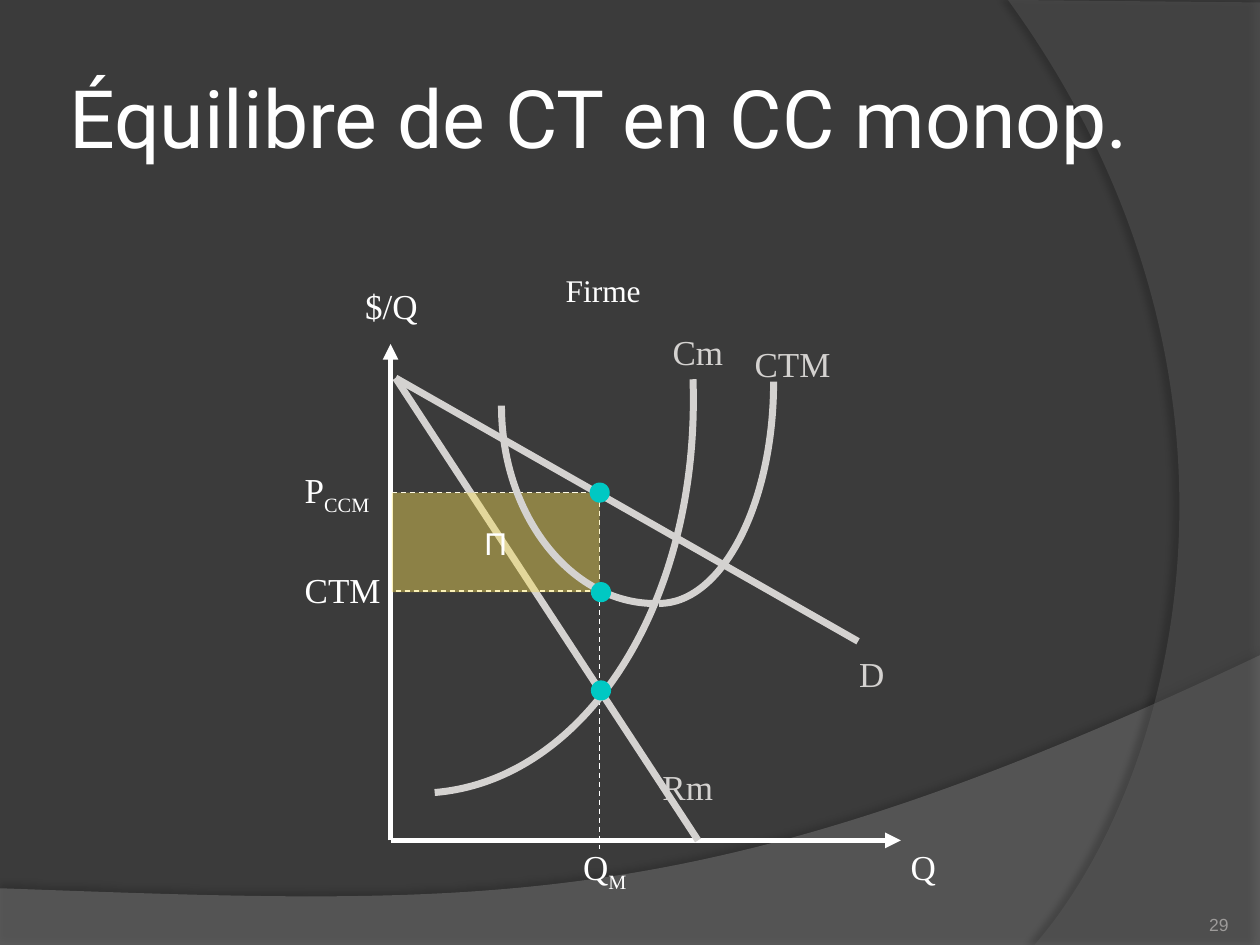
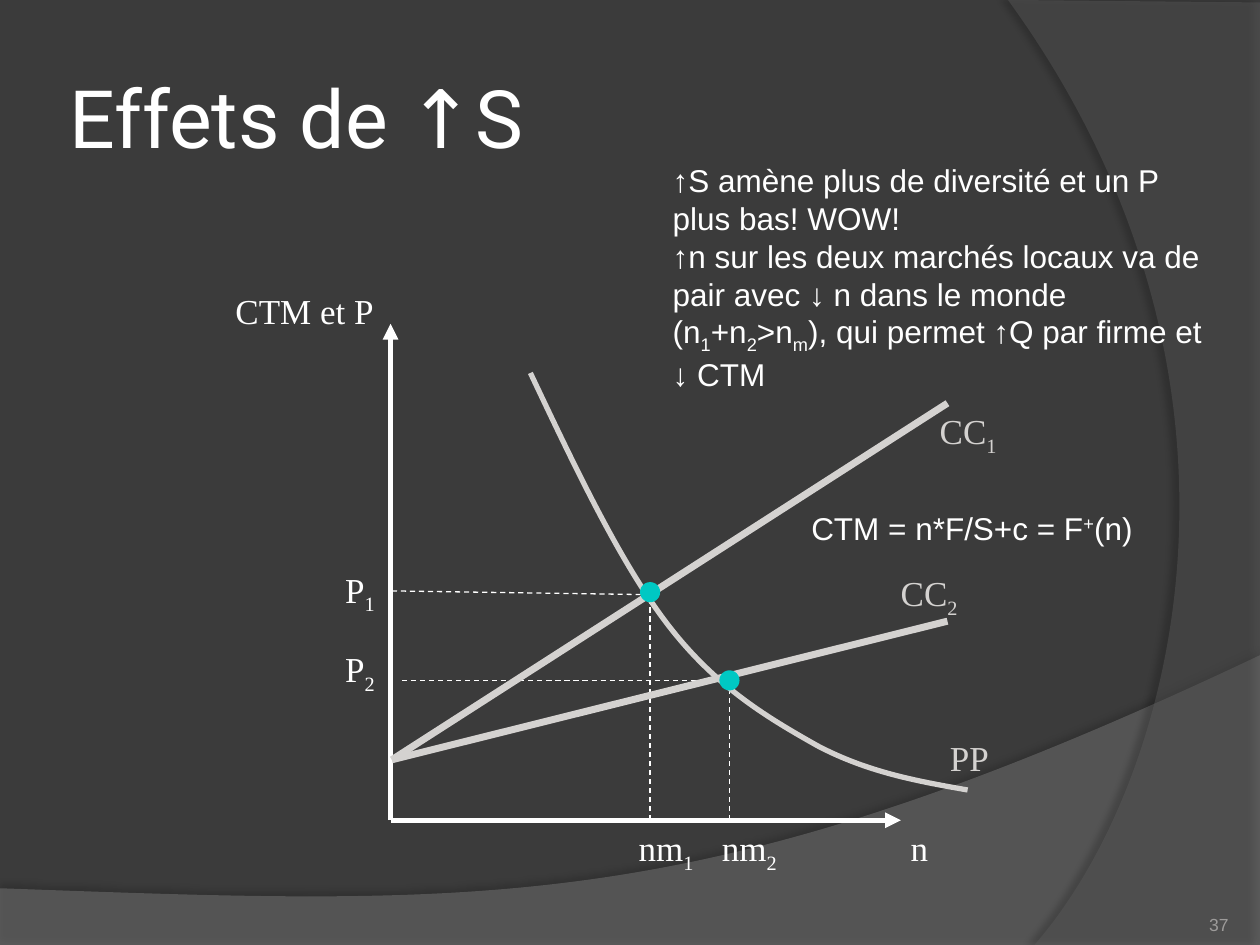
"""Builds two slides of microeconomics diagrams on monopolistic competition."""
from lxml import etree
from pptx import Presentation
from pptx.dml.color import RGBColor
from pptx.enum.dml import MSO_LINE
from pptx.enum.shapes import MSO_CONNECTOR, MSO_SHAPE
from pptx.enum.text import MSO_ANCHOR, MSO_AUTO_SIZE, PP_ALIGN
from pptx.oxml.ns import qn
from pptx.util import Inches, Pt

BACKGROUND = RGBColor(0x3B, 0x3B, 0x3B)
WHITE = RGBColor(0xFF, 0xFF, 0xFF)
CURVE = RGBColor(0xD4, 0xD2, 0xD0)
DOT = RGBColor(0x00, 0xC8, 0xC3)
PROFIT = RGBColor(0xF7, 0xDF, 0x56)
FOOTER = RGBColor(0x9D, 0x9B, 0x9A)
WAVE = RGBColor(0x7F, 0x7F, 0x7F)
ARC = RGBColor(0x5E, 0x5E, 0x5E)

TITLE_FONT, LABEL_FONT, BODY_FONT = "Roboto", "Times New Roman", "Arial"
STRAIGHT = MSO_CONNECTOR.STRAIGHT
DASH = MSO_LINE.DASH
RECTANGLE, CIRCLE = MSO_SHAPE.RECTANGLE, MSO_SHAPE.FLOWCHART_CONNECTOR
MIDDLE, BOTTOM = MSO_ANCHOR.MIDDLE, MSO_ANCHOR.BOTTOM
LEFT, CENTER, RIGHT = PP_ALIGN.LEFT, PP_ALIGN.CENTER, PP_ALIGN.RIGHT
NO_AUTOFIT = MSO_AUTO_SIZE.NONE

AXIS_X, AXIS_END, AXIS_HEIGHT = 3.1, 7.15, 3.94
DOT_SIZE = 0.16
SUPERSCRIPTS = {"+"}

# Outlines: a start point, then (x, y) for a line or (x1, y1, x2, y2, x, y) for a curve.
BANDS = [
    {"outline": [(0, 7.05), (0, 7.51), (10, 7.51), (10, 5.2),
                 (5.59, 7.29, 3.91, 7.19, 0, 7.05)],
     "color": WAVE, "alpha": 45, "shadow": (35, 4, 3.5, 270)},
    {"outline": [(10, 0.02), (10, 7.5), (8.21, 7.5),
                 (9.35, 6.19, 10.18, 3, 8, 0), (10, 0.02)],
     "color": ARC, "alpha": 40, "shadow": (45, 4, 4, 180)},
]

# Labels: x, y, width, text (index parts between tildes), colour, size.
SLIDES = [
    {"title": "Équilibre de CT en CC monop.", "title_width": 8.91, "number": "29",
     "axis_y": 6.67,
     "guides": [(4.76, 3.91, 4.76, 6.74), (3.11, 3.91, 4.65, 3.91),
                (3.14, 4.69, 4.69, 4.69)],
     "lines": [(3.14, 3, 6.81, 5.09), (3.14, 3, 5.54, 6.67)],
     "profit": (3.11, 3.91, 1.65, 0.79, "Π"),
     "curves": [([(3.45, 6.29), (4.66, 6.19, 5.56, 4.76, 5.5, 3.01)], 4),
                ([(5.2, 4.79), (4.53, 4.79, 3.98, 4.09, 3.98, 3.22)], 4),
                ([(5.23, 4.79), (5.73, 4.79, 6.14, 4, 6.14, 3.03)], 4)],
     "dots": [(4.76, 3.91), (4.77, 4.7), (4.77, 5.48)],
     "labels": [(4.39, 2.1, 1.01, "Firme", WHITE, 18),
                (7.13, 6.66, 0.4, "Q", WHITE, 20),
                (2.8, 2.21, 0.62, "$/Q", WHITE, 20),
                (2.32, 3.67, 0.77, "P~CCM", WHITE, 20),
                (2.32, 4.46, 0.87, "CTM", WHITE, 20),
                (4.53, 6.66, 0.57, "Q~M", WHITE, 20),
                (6.72, 5.13, 0.4, "D", CURVE, 20),
                (5.16, 6.03, 0.6, "Rm", CURVE, 20),
                (5.24, 2.57, 0.6, "Cm", CURVE, 20),
                (5.89, 2.67, 0.81, "CTM", CURVE, 20)],
     "notes": []},
    {"title": "Effets de ↑S", "title_width": 8.17, "number": "37",
     "axis_y": 6.51,
     "guides": [(3.11, 4.69, 5.16, 4.72), (5.16, 6.51, 5.16, 4.69),
                (3.19, 5.4, 5.79, 5.4), (5.79, 6.51, 5.79, 5.4)],
     "lines": [(7.52, 4.93, 3.11, 6.03), (7.52, 3.2, 3.11, 6.03)],
     "profit": None,
     "curves": [([(4.21, 2.96), (4.57, 3.72, 4.93, 4.48, 5.31, 4.97),
                  (5.69, 5.46, 6.1, 5.7, 6.49, 5.92),
                  (6.89, 6.13, 7.28, 6.2, 7.68, 6.27)], 3)],
     "dots": [(5.16, 4.7), (5.79, 5.4)],
     "labels": [(7.13, 6.51, 0.34, "n", WHITE, 20),
                (1.77, 2.25, 1.31, "CTM et P", WHITE, 20),
                (2.64, 4.46, 0.55, "P~1", WHITE, 20),
                (2.64, 5.09, 0.47, "P~2", WHITE, 20),
                (4.97, 6.51, 0.65, "nm~1", WHITE, 20),
                (5.63, 6.51, 0.71, "nm~2", WHITE, 20),
                (7.36, 3.2, 0.87, "CC~1", CURVE, 20),
                (7.05, 4.49, 0.71, "CC~2", CURVE, 20),
                (7.44, 5.8, 0.51, "PP", CURVE, 20)],
     "notes": [(5.24, 1.23, 4.49, 1.92,
                ["↑S amène plus de diversité et un P plus bas! WOW!",
                 "↑n sur les deux marchés locaux va de pair avec ↓ n dans le monde "
                 "(n~1~+n~2~>n~m~), qui permet ↑Q par firme et ↓ CTM"]),
               (6.34, 3.99, 2.91, 0.4, ["CTM = n*F/S+c = F~+~(n)"])]},
]


def box(*lengths):
    return [Inches(n) for n in lengths]


def style(p, name, size, color, align=LEFT):
    p.alignment = align
    p.font.name, p.font.size, p.font.color.rgb = name, Pt(size), color


def set_fill(sp, color, alpha=None):
    sp.shadow.inherit = False
    sp.line.fill.background()
    sp.fill.solid()
    sp.fill.fore_color.rgb = color
    if alpha:
        clr = next(sp.element.spPr.iter(qn("a:srgbClr")))
        etree.SubElement(clr, qn("a:alpha"), val=str(alpha * 1000))


def add_line(slide, ends, color, width, dash=None, arrow=False):
    line = slide.shapes.add_connector(STRAIGHT, *box(*ends))
    line.line.color.rgb, line.line.width = color, Pt(width)
    if dash:
        line.line.dash_style = dash
    if arrow:
        etree.SubElement(line.line._get_or_add_ln(), qn("a:tailEnd"), type="triangle")
    etree.SubElement(line.element.spPr, qn("a:effectLst"))


def add_outline(slide, outline, close=False):
    start, *segments = outline
    builder = slide.shapes.build_freeform(*box(*start))
    builder.add_line_segments([box(*seg[-2:]) for seg in segments], close=close)
    sp = builder.convert_to_shape()
    for line_to, seg in zip(list(sp.element.iter(qn("a:lnTo"))), segments):
        if len(seg) == 2:
            continue
        curve = etree.Element(qn("a:cubicBezTo"))
        for x, y in (seg[:2], seg[2:4]):
            etree.SubElement(curve, qn("a:pt"), x=str(Inches(x) - sp.left),
                             y=str(Inches(y) - sp.top))
        curve.append(line_to[0])
        line_to.getparent().replace(line_to, curve)
    return sp


def add_text(slide, place, paragraphs, name, size, color, margin_right=0.1):
    tf = slide.shapes.add_textbox(*box(*place)).text_frame
    tf.word_wrap = True
    tf.margin_right = Inches(margin_right)
    for i, text in enumerate(paragraphs):
        p = tf.add_paragraph() if i else tf.paragraphs[0]
        style(p, name, size, color)
        for j, part in enumerate(text.split("~")):
            r = p.add_run()
            r.text = part
            if j % 2:
                base = 30000 if part in SUPERSCRIPTS else -25000
                r.font._element.set("baseline", str(base))
    return tf


def add_bands(prs, slide):
    tree = prs.slide_master.shapes.element
    for i, band in enumerate(BANDS):
        sp = add_outline(slide, band["outline"], close=True)
        set_fill(sp, band["color"], band["alpha"])
        alpha, blur, dist, angle = band["shadow"]
        shadow = etree.SubElement(
            sp.element.spPr.find(qn("a:effectLst")), qn("a:outerShdw"),
            blurRad=str(Pt(blur)), dist=str(Pt(dist)), dir=str(angle * 60000),
            algn="ctr", rotWithShape="0")
        clr = etree.SubElement(shadow, qn("a:srgbClr"), val="000000")
        etree.SubElement(clr, qn("a:alpha"), val=str(alpha * 1000))
        sp.element.nvSpPr.cNvPr.set("id", str(100 + i))
        tree.insert(2 + i, sp.element)


def add_frame(slide, content):
    title = slide.shapes.title
    title.left, title.top, title.width, title.height = box(
        0.5, 0.3, content["title_width"], 1.25)
    tf = title.text_frame
    tf.text = content["title"]
    tf.auto_size, tf.vertical_anchor = NO_AUTOFIT, MIDDLE
    tf.margin_left = tf.margin_right = tf.margin_top = tf.margin_bottom = Inches(0.05)
    style(tf.paragraphs[0], TITLE_FONT, 46, WHITE)

    tf = add_text(slide, (8.92, 7.02, 0.83, 0.4), [content["number"]],
                  BODY_FONT, 10, FOOTER, 0)
    tf.margin_left = tf.margin_top = tf.margin_bottom = 0
    tf.vertical_anchor = BOTTOM
    tf.paragraphs[0].alignment = RIGHT


def add_diagram(slide, content):
    for ends in content["guides"]:
        add_line(slide, ends, WHITE, 0.75, dash=DASH)
    y = content["axis_y"]
    for end in ((AXIS_END, y), (AXIS_X, y - AXIS_HEIGHT)):
        add_line(slide, (AXIS_X, y, *end), WHITE, 3, arrow=True)
    for ends in content["lines"]:
        add_line(slide, ends, CURVE, 4)
    if content["profit"]:
        *place, text = content["profit"]
        sp = slide.shapes.add_shape(RECTANGLE, *box(*place))
        set_fill(sp, PROFIT, 43)
        sp.text_frame.text = text
        sp.text_frame.vertical_anchor = MIDDLE
        style(sp.text_frame.paragraphs[0], BODY_FONT, 18, WHITE, CENTER)
    for outline, width in content["curves"]:
        sp = add_outline(slide, outline)
        sp.shadow.inherit = False
        sp.fill.background()
        sp.line.color.rgb, sp.line.width = CURVE, Pt(width)
    for x, y in content["dots"]:
        place = (x - DOT_SIZE / 2, y - DOT_SIZE / 2, DOT_SIZE, DOT_SIZE)
        set_fill(slide.shapes.add_shape(CIRCLE, *box(*place)), DOT)
    for x, y, width, text, color, size in content["labels"]:
        add_text(slide, (x, y, width, 0.44), [text], LABEL_FONT, size, color, 0)
    for *place, paragraphs in content["notes"]:
        add_text(slide, place, paragraphs, BODY_FONT, 18, WHITE)


def main():
    prs = Presentation()
    prs.slide_width, prs.slide_height = box(10, 7.5)
    fill = prs.slide_master.background.fill
    fill.solid()
    fill.fore_color.rgb = BACKGROUND
    for i, content in enumerate(SLIDES):
        slide = prs.slides.add_slide(prs.slide_layouts[5])
        if i == 0:
            add_bands(prs, slide)
        add_frame(slide, content)
        add_diagram(slide, content)
    prs.save("out.pptx")


if __name__ == "__main__":
    main()
